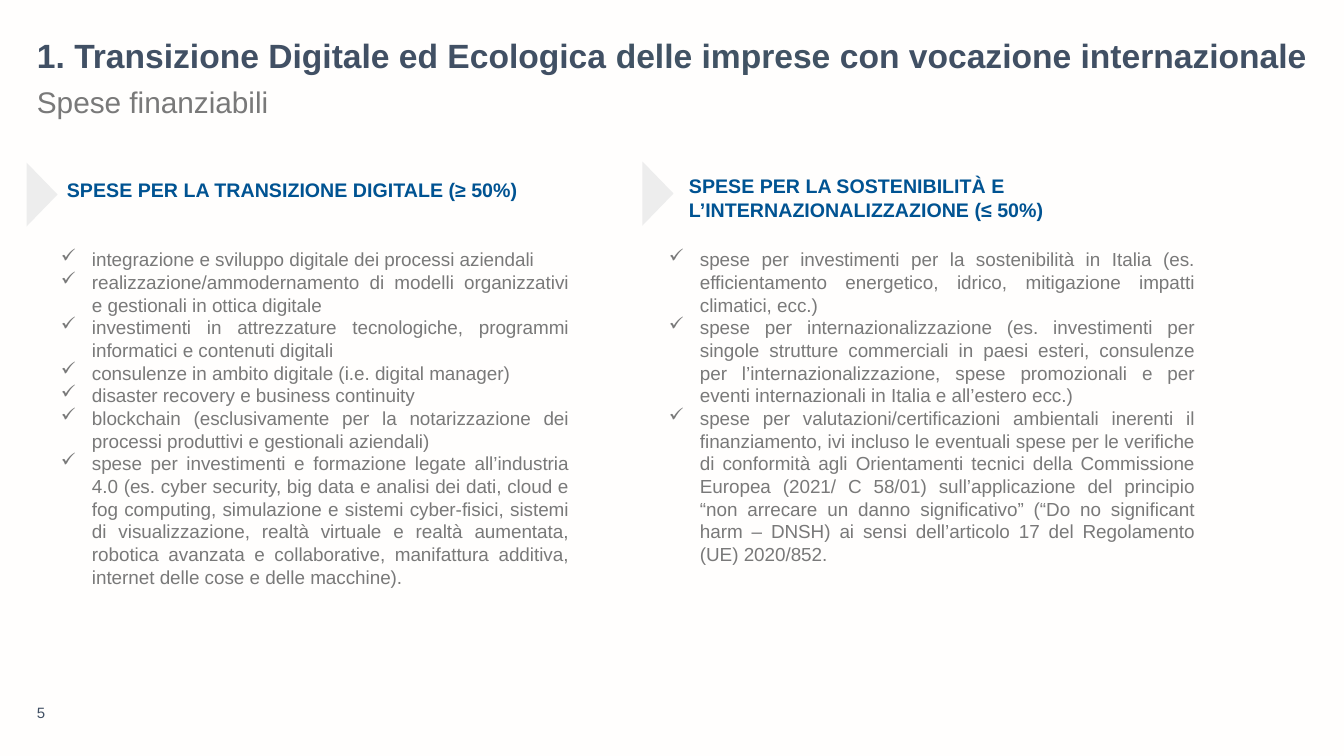
from lxml.etree import SubElement
from pptx import Presentation
from pptx.dml.color import RGBColor
from pptx.enum.shapes import MSO_SHAPE as Shape
from pptx.enum.text import MSO_ANCHOR as Anchor, PP_ALIGN as Align
from pptx.oxml.ns import qn
from pptx.util import Pt

EMU_PER_PX = 12192000 / 1344
COLORS = {
    "background": "FFFEFD",
    "title": "415064",
    "title_mid": "415364",
    "text": "797979",
    "heading": "005392",
    "marker": "EDEDED",
}

TITLE = [
    ("1. Transizione Digitale ed Ecologica ", "title"),
    ("delle imprese ", "title_mid"),
    ("con vocazione internazionale", "title"),
]

DIGITAL_EXPENSES = [
    "integrazione e sviluppo digitale dei processi aziendali",
    "realizzazione/ammodernamento di modelli organizzativi e gestionali in ottica digitale",
    "investimenti in attrezzature tecnologiche, programmi informatici e contenuti digitali",
    "consulenze in ambito digitale (i.e. digital manager)",
    "disaster recovery e business continuity",
    "blockchain (esclusivamente per la notarizzazione dei processi produttivi e gestionali "
    "aziendali)",
    "spese per investimenti e formazione legate all’industria 4.0 (es. cyber security, big data "
    "e analisi dei dati, cloud e fog computing, simulazione e sistemi cyber-fisici, sistemi di "
    "visualizzazione, realtà virtuale e realtà aumentata, robotica avanzata e collaborative, "
    "manifattura additiva, internet delle cose e delle macchine).",
]

SUSTAINABILITY_EXPENSES = [
    "spese per investimenti per la sostenibilità in Italia (es. efficientamento energetico, "
    "idrico, mitigazione impatti climatici, ecc.)",
    "spese per internazionalizzazione (es. investimenti per singole strutture commerciali "
    "in paesi esteri, consulenze per l’internazionalizzazione, spese promozionali e per eventi "
    "internazionali in Italia e all’estero ecc.)",
    "spese per valutazioni/certificazioni ambientali inerenti il finanziamento, ivi incluso le "
    "eventuali spese per le verifiche di conformità agli Orientamenti tecnici della Commissione "
    "Europea (2021/ C 58/01) sull’applicazione del principio “non arrecare un danno "
    "significativo” (“Do no significant harm – DNSH) ai sensi dell’articolo 17 del Regolamento "
    "(UE) 2020/852.",
]

# heading, heading box, marker box before rotation, expenses, expenses box
COLUMNS = [
    ("SPESE PER LA TRANSIZIONE DIGITALE (≥ 50%)", (57, 173, 610, 56),
     (10, 179, 64, 31), DIGITAL_EXPENSES, (51, 243, 528, 354)),
    ("SPESE PER LA SOSTENIBILITÀ E L’INTERNAZIONALIZZAZIONE (≤ 50%)", (679, 169, 610, 57),
     (626, 178, 64, 31), SUSTAINABILITY_EXPENSES, (659, 243, 546, 331)),
]


def px(length):
    return round(length * EMU_PER_PX)


def color(name):
    return RGBColor.from_string(COLORS[name])


class SlideBuilder:
    font_name = "Arial"
    bullet_indent = 31

    def __init__(self, slide):
        self.slide = slide
        background = slide.background.fill
        background.solid()
        background.fore_color.rgb = color("background")

    def frame(self, box, **format_values):
        frame = self.slide.shapes.add_textbox(*map(px, box)).text_frame
        for name, value in {"word_wrap": True, **format_values}.items():
            setattr(frame, name, value)
        return frame

    def run(self, paragraph, text, size, color_name, bold=False):
        run = paragraph.add_run()
        run.text = text
        font_values = {"name": self.font_name, "size": Pt(size), "bold": bold}
        for name, value in font_values.items():
            setattr(run.font, name, value)
        run.font.color.rgb = color(color_name)

    def line(self, box, parts, size, bold=False, line_spacing=0.9, anchor=Anchor.TOP):
        """Add one paragraph of (text, colour) parts in a box without margins."""
        sides = ("left", "top", "right", "bottom")
        margins = {f"margin_{side}": 0 for side in sides}
        paragraph = self.frame(box, vertical_anchor=anchor, **margins).paragraphs[0]
        paragraph.line_spacing = line_spacing
        for text, color_name in parts:
            self.run(paragraph, text, size, color_name, bold)

    def heading(self, box, text):
        self.run(self.frame(box).paragraphs[0], text, 14, "heading", bold=True)

    def marker(self, box):
        triangle = self.slide.shapes.add_shape(Shape.ISOSCELES_TRIANGLE, *map(px, box))
        triangle.rotation = 90
        triangle.shadow.inherit = False
        triangle.fill.solid()
        triangle.fill.fore_color.rgb = color("marker")
        triangle.line.fill.background()

    def checklist(self, box, items):
        frame = self.frame(box)
        for index, item in enumerate(items):
            paragraph = frame.add_paragraph() if index else frame.paragraphs[0]
            paragraph.alignment = Align.JUSTIFY
            properties = paragraph._p.get_or_add_pPr()
            properties.set("marL", str(px(self.bullet_indent)))
            properties.set("indent", str(-px(self.bullet_indent)))
            SubElement(properties, qn("a:buChar"), char="✓")
            self.run(paragraph, item, 13.5, "text")


def main():
    presentation = Presentation()
    presentation.slide_width = px(1344)
    presentation.slide_height = px(756)
    builder = SlideBuilder(presentation.slides.add_slide(presentation.slide_layouts[6]))

    builder.line((37, 39, 1307, 42), TITLE, 24, bold=True)
    builder.line((37, 88, 948, 42), [("Spese finanziabili", "text")], 21.3)
    for heading, heading_box, marker_box, expenses, expenses_box in COLUMNS:
        builder.heading(heading_box, heading)
        builder.marker(marker_box)
        builder.checklist(expenses_box, expenses)
    builder.line((37, 695, 148, 27), [("5", "title")], 10.7,
                 line_spacing=1.0, anchor=Anchor.BOTTOM)

    presentation.save("out.pptx")


if __name__ == "__main__":
    main()
